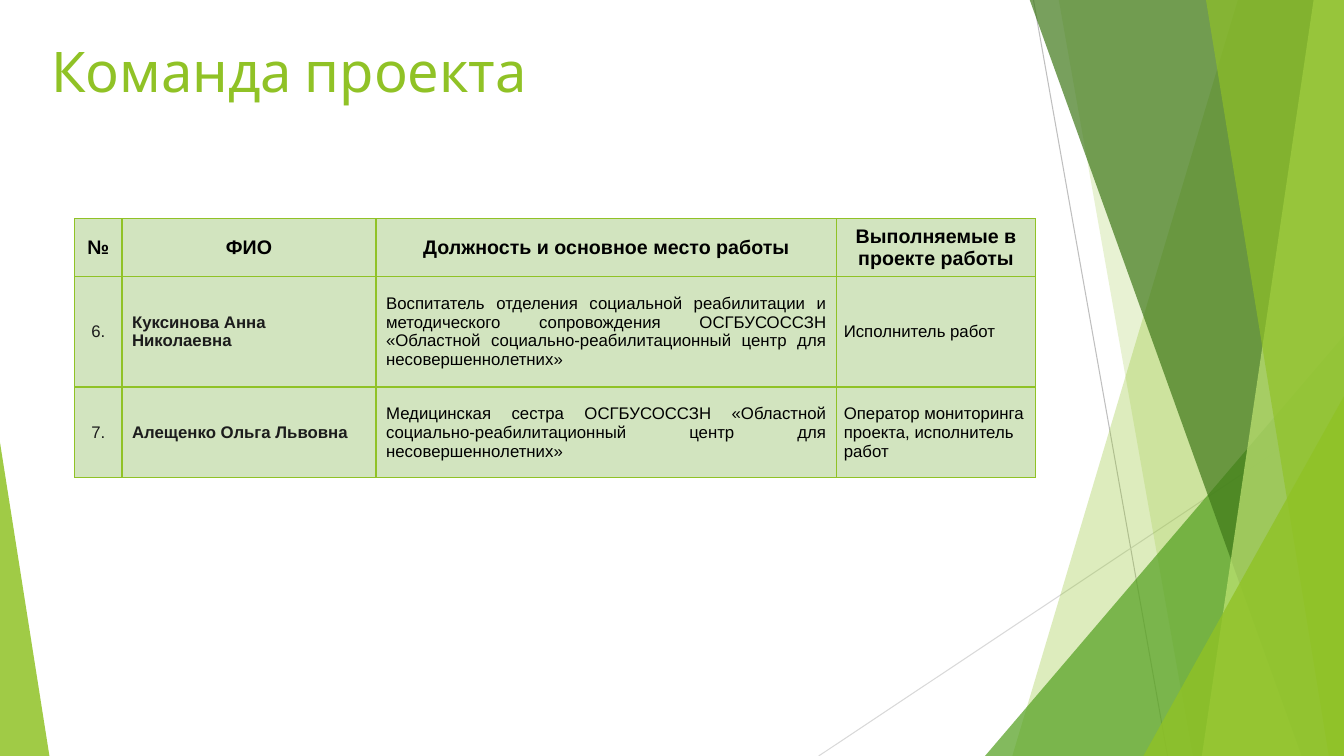
from lxml.etree import SubElement
from pptx import Presentation
from pptx.dml.color import RGBColor
from pptx.enum.shapes import MSO_CONNECTOR as Connector, MSO_SHAPE as Shape
from pptx.enum.text import MSO_ANCHOR as Anchor, PP_ALIGN as Align
from pptx.oxml import parse_xml
from pptx.oxml.ns import nsdecls, qn
from pptx.util import Inches, Pt


class Theme:
    lime = "90C226"
    pale_lime = "C0E474"
    green = "54A021"
    dark_green = "3F7819"
    cell = "D2E4BF"
    black = "000000"
    ink = "1C1C1C"
    title_font, body_font = "Cabin", "Arial"
    title_size, header_size, body_size = 40, 14, 12


def write_text(frame, text, font=Theme.body_font, size=Theme.body_size,
               color=Theme.black, bold=False, align=Align.LEFT, after=0):
    frame.word_wrap = True
    paragraph = frame.paragraphs[0]
    paragraph.alignment = align
    paragraph.space_after = Pt(after)
    run = paragraph.add_run()
    run.text = text
    run.font.name = font
    run.font.size = Pt(size)
    run.font.bold = bold
    run.font.color.rgb = RGBColor.from_string(color)


def paint(shape, color, opacity):
    shape.shadow.inherit = False
    shape.line.fill.background()
    shape.fill.solid()
    shape.fill.fore_color.rgb = RGBColor.from_string(color)
    tint = shape.fill._xPr.find(".//" + qn("a:srgbClr"))
    SubElement(tint, qn("a:alpha"), val=str(opacity * 1000))


presentation = Presentation()
presentation.slide_width = Inches(13.33)
presentation.slide_height = Inches(7.5)
slide = presentation.slides.add_slide(presentation.slide_layouts[6])
shapes = slide.shapes

# Thin crossing lines
for x1, y1, x2, y2, color in [(10.25, 0, 11.58, 7.5, "BFBFBF"),
                              (13.33, 4.03, 8.12, 7.5, "D9D9D9")]:
    line = shapes.add_connector(Connector.STRAIGHT, Inches(x1), Inches(y1),
                                Inches(x2), Inches(y2))
    line.line.color.rgb = RGBColor.from_string(color)
    line.line.width = Pt(0.75)
    SubElement(line._element.spPr, qn("a:effectLst"))

# Facets from back to front: slabs run from a top x and a bottom x to the
# right edge; triangles stand on the bottom edge (left, top, width, apex)
facets = [
    ("slab", (12.28, 10.04), Theme.lime, 30),
    ("slab", (10.5, 11.83), Theme.lime, 20),
    ("triangle", (9.77, 3.33, 3.56, 1), Theme.green, 72),
    ("slab", (10.21, 12.91), Theme.dark_green, 70),
    ("slab", (13.03, 11.92), Theme.pale_lime, 70),
    ("slab", (11.96, 13.18), Theme.lime, 65),
    ("triangle", (11.34, 3.93, 1.99, 1), Theme.lime, 80),
    ("triangle", (0, 4.39, 0.49, 0), Theme.lime, 85),
]
for kind, geometry, color, opacity in facets:
    if kind == "slab":
        top_x, bottom_x = geometry
        builder = shapes.build_freeform(Inches(top_x), Inches(-0.01))
        builder.add_line_segments([
            (Inches(x), Inches(y))
            for x, y in [(13.33, -0.01), (13.33, 7.5), (bottom_x, 7.5)]])
        facet = builder.convert_to_shape()
    else:
        left, top, width, apex = geometry
        facet = shapes.add_shape(Shape.ISOSCELES_TRIANGLE, Inches(left), Inches(top),
                                 Inches(width), Inches(7.5 - top))
        facet.adjustments[0] = apex
    paint(facet, color, opacity)

# Title
title = shapes.add_textbox(Inches(0.41), Inches(0.14), Inches(9.4), Inches(0.94))
title.text_frame.vertical_anchor = Anchor.BOTTOM
write_text(title.text_frame, "Команда проекта", font=Theme.title_font,
           size=Theme.title_size, color=Theme.lime)

# Team table
rows = [
    ("№", "ФИО", "Должность и основное место работы", "Выполняемые в проекте работы"),
    ("6.", "Куксинова Анна Николаевна",
     "Воспитатель отделения социальной реабилитации и методического сопровождения "
     "ОСГБУСОССЗН «Областной социально-реабилитационный центр для несовершеннолетних»",
     "Исполнитель работ"),
    ("7.", "Алещенко Ольга Львовна",
     "Медицинская сестра ОСГБУСОССЗН «Областной социально-реабилитационный центр "
     "для несовершеннолетних»",
     "Оператор мониторинга проекта, исполнитель работ"),
]
header_format = dict(size=Theme.header_size, bold=True, align=Align.CENTER)
column_formats = [
    dict(color=Theme.ink, align=Align.CENTER),
    dict(color=Theme.ink, bold=True),
    dict(align=Align.JUSTIFY, after=12),
    dict(),
]
table = shapes.add_table(3, 4, Inches(0.74), Inches(2.17),
                         Inches(9.53), Inches(2.57)).table
table.first_row = table.horz_banding = False
for column, width in zip(table.columns, [0.47, 2.52, 4.57, 1.97]):
    column.width = Inches(width)
for row, height in zip(table.rows, [0.57, 1.1, 0.9]):
    row.height = Inches(height)

for row_index, texts in enumerate(rows):
    for column_index, text in enumerate(texts):
        cell = table.cell(row_index, column_index)
        cell.vertical_anchor = Anchor.MIDDLE
        if row_index and column_index == 3:
            cell.margin_left = cell.margin_right = Inches(0.07)
            cell.margin_top = cell.margin_bottom = 0
        text_format = column_formats[column_index] if row_index else header_format
        write_text(cell.text_frame, text, **text_format)
        # Borders come before the fill in the cell properties
        properties = cell._tc.get_or_add_tcPr()
        for side in ("lnL", "lnR", "lnT", "lnB"):
            properties.append(parse_xml(
                f'<a:{side} {nsdecls("a")} w="12700"><a:solidFill>'
                f'<a:srgbClr val="{Theme.lime}"/></a:solidFill></a:{side}>'))
        cell.fill.solid()
        cell.fill.fore_color.rgb = RGBColor.from_string(Theme.cell)

presentation.save("out.pptx")
